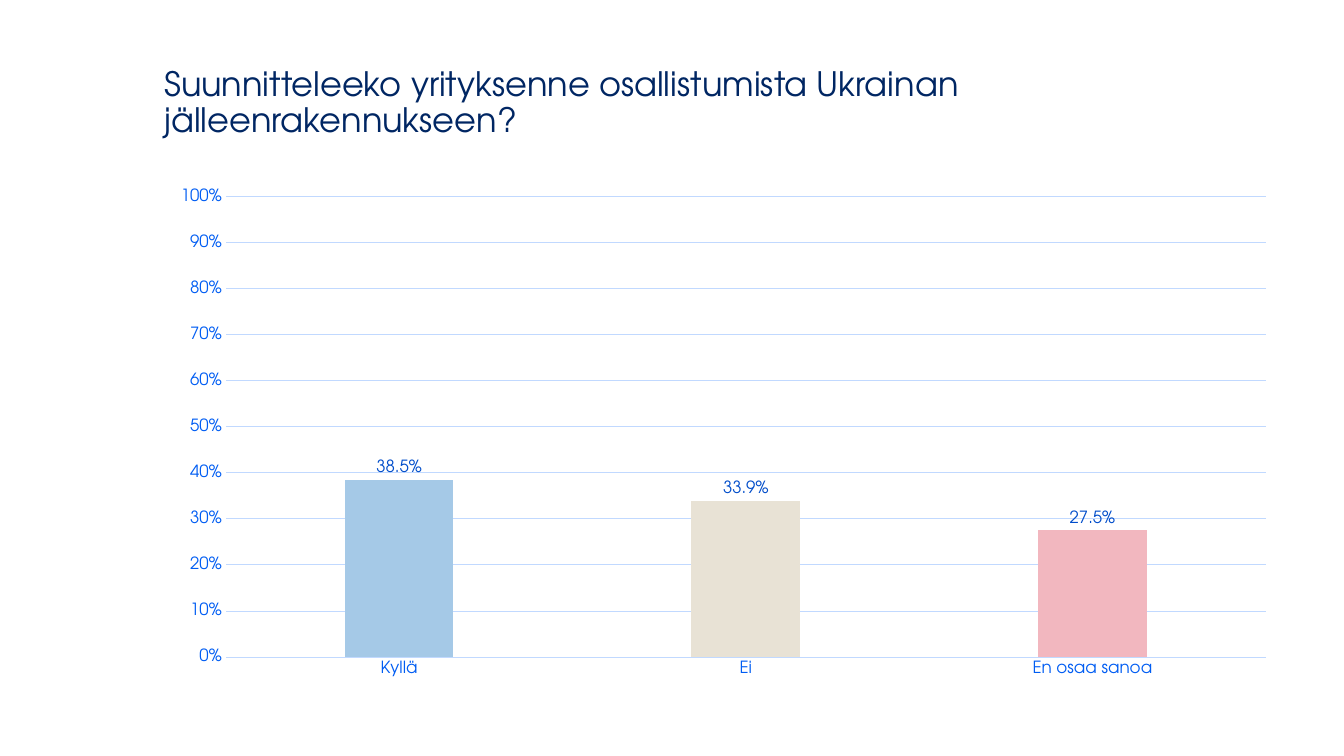
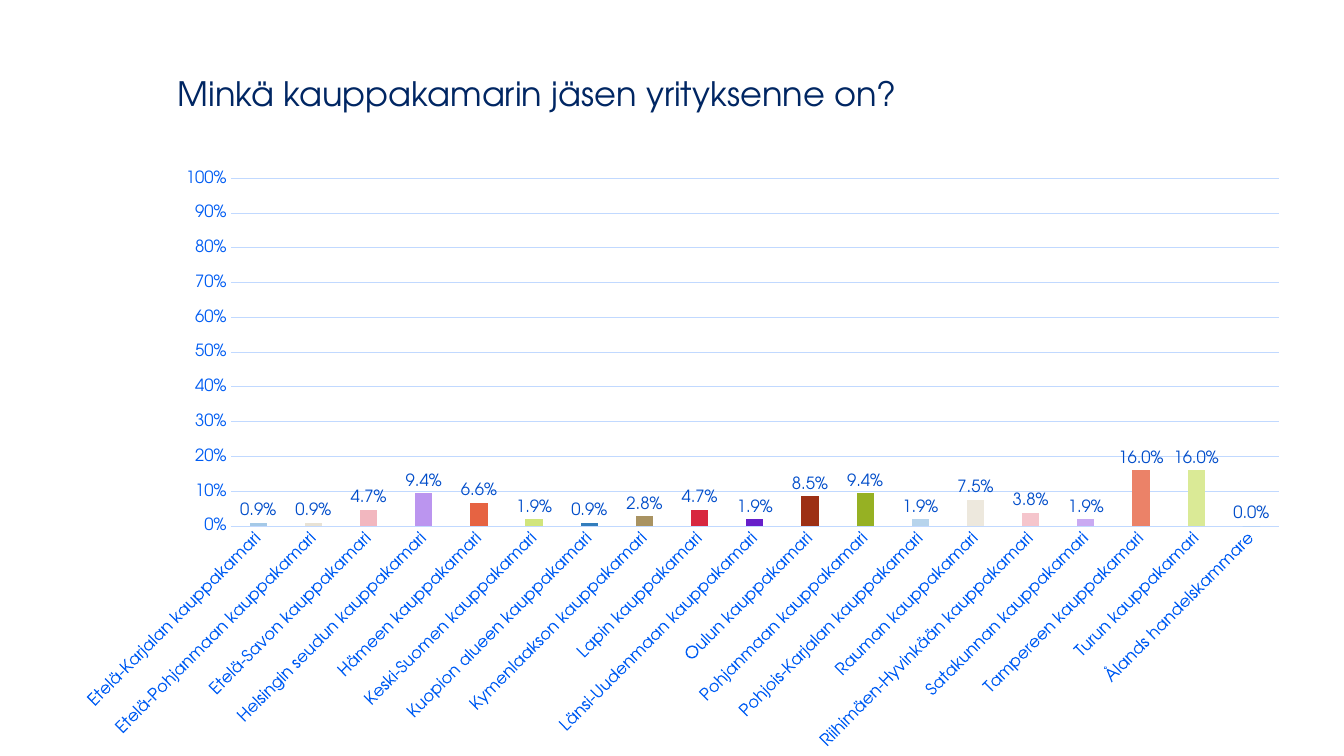
from dataclasses import dataclass

import pptx
import pptx.chart.data
import pptx.dml.color
import pptx.enum.chart
import pptx.enum.text
import pptx.oxml
import pptx.oxml.ns
import pptx.util
from pptx.util import Inches

FONT = "TeX Gyre Adventor"
NAVY, AXIS_BLUE, LABEL_BLUE, GRID_BLUE = "002663", "005DF3", "004DCA", "C1D9FF"

Box = tuple[float, float, float, float]  # left, top, width, height in inches


@dataclass
class Bar:
    name: str
    value: float
    color: str


@dataclass
class ChartSlide:
    title: str
    title_box: Box
    chart_box: Box
    plot_box: Box
    bars: list[Bar]


SLIDES = [
    ChartSlide(
        "Suunnitteleeko yrityksenne osallistumista Ukrainan jälleenrakennukseen?",
        (1.53, 0.3, 10.94, 1.45), (1.44, 1.75, 11.12, 5.14), (2.24, 1.95, 10.32, 4.57),
        [
            Bar("Kyllä", 0.385, "A5C9E7"),
            Bar("Ei", 0.339, "E8E2D5"),
            Bar("En osaa sanoa", 0.275, "F2B7BF"),
        ],
    ),
    ChartSlide(
        "Minkä kauppakamarin jäsen yrityksenne on?",
        (1.66, 0.22, 10.94, 1.45), (0.85, 1.67, 11.84, 5.87), (2.24, 1.77, 10.45, 3.45),
        [
            Bar("Etelä-Karjalan kauppakamari", 0.009, "A5C9E7"),
            Bar("Etelä-Pohjanmaan kauppakamari", 0.009, "E8E2D5"),
            Bar("Etelä-Savon kauppakamari", 0.047, "F2B7BF"),
            Bar("Helsingin seudun kauppakamari", 0.094, "BB95EF"),
            Bar("Hämeen kauppakamari", 0.066, "E66342"),
            Bar("Keski-Suomen kauppakamari", 0.019, "D1E57C"),
            Bar("Kuopion alueen kauppakamari", 0.009, "327DBC"),
            Bar("Kymenlaakson kauppakamari", 0.028, "A99362"),
            Bar("Lapin kauppakamari", 0.047, "D8273F"),
            Bar("Länsi-Uudenmaan kauppakamari", 0.019, "671FCA"),
            Bar("Oulun kauppakamari", 0.085, "9D3015"),
            Bar("Pohjanmaan kauppakamari", 0.094, "96B123"),
            Bar("Pohjois-Karjalan kauppakamari", 0.019, "B7D4EC"),
            Bar("Rauman kauppakamari", 0.075, "EDE8DD"),
            Bar("Riihimäen-Hyvinkään kauppakamari", 0.038, "F5C5CC"),
            Bar("Satakunnan kauppakamari", 0.019, "C9AAF2"),
            Bar("Tampereen kauppakamari", 0.16, "EB8268"),
            Bar("Turun kauppakamari", 0.16, "DAEA96"),
            Bar("Ålands handelskammare", 0, "66A3D6"),
        ],
    ),
]


def rgb(color: str) -> pptx.dml.color.RGBColor:
    return pptx.dml.color.RGBColor.from_string(color)


def set_all(target, values: dict) -> None:
    for name, value in values.items():
        setattr(target, name, value)


def style_font(font, size: float, color: str) -> None:
    set_all(font, {"name": FONT, "size": pptx.util.Pt(size), "bold": False})
    font.color.rgb = rgb(color)


def style_line(line) -> None:
    line.color.rgb = rgb(GRID_BLUE)
    line.width = pptx.util.Pt(0.75)


def add_title(s, text: str, box: Box) -> None:
    sp = s.shapes.title
    set_all(sp, dict(zip(("left", "top", "width", "height"), map(Inches, box))))
    tf = sp.text_frame
    set_all(tf, {
        "text": text,
        "word_wrap": True,
        "auto_size": pptx.enum.text.MSO_AUTO_SIZE.NONE,
        "vertical_anchor": pptx.enum.text.MSO_ANCHOR.MIDDLE,
    })
    p = tf.paragraphs[0]
    set_all(p, {"alignment": pptx.enum.text.PP_ALIGN.LEFT, "line_spacing": 0.9})
    style_font(p.runs[0].font, 24, NAVY)


def place_plot(chart, chart_box: Box, plot_box: Box) -> None:
    """Fix the inner plot area at plot_box, given in slide inches."""
    left, top, width, height = chart_box
    x, y, w, h = plot_box
    shares = {"x": (x - left) / width, "y": (y - top) / height, "w": w / width, "h": h / height}
    modes = "".join(f'<c:{n}Mode val="edge"/>' for n in "xy")
    sizes = "".join(f'<c:{n} val="{v:.4f}"/>' for n, v in shares.items())
    area = chart._chartSpace.chart.plotArea
    for old in area.findall(pptx.oxml.ns.qn("c:layout")):
        area.remove(old)
    area.insert(0, pptx.oxml.parse_xml(
        f'<c:layout {pptx.oxml.ns.nsdecls("c")}><c:manualLayout>'
        f'<c:layoutTarget val="inner"/>{modes}{sizes}</c:manualLayout></c:layout>'))


def style_axes(chart) -> None:
    for axis in (chart.category_axis, chart.value_axis):
        none = pptx.enum.chart.XL_TICK_MARK.NONE
        set_all(axis, {"major_tick_mark": none, "minor_tick_mark": none})
        style_font(axis.tick_labels.font, 12, AXIS_BLUE)
    style_line(chart.category_axis.format.line)
    # Automatic rotation: long category names are slanted
    body = chart.category_axis._element.find(".//" + pptx.oxml.ns.qn("a:bodyPr"))
    body.set("rot", "-60000000")

    axis = chart.value_axis
    set_all(axis, {"minimum_scale": 0, "maximum_scale": 1, "major_unit": 0.1,
                   "has_major_gridlines": True})
    set_all(axis.tick_labels, {"number_format": "0%", "number_format_is_linked": False})
    axis.format.line.fill.background()
    style_line(axis.major_gridlines.format.line)


def add_bar_chart(s, spec: ChartSlide) -> None:
    data = pptx.chart.data.CategoryChartData(number_format="0.0%")
    data.categories = [bar.name for bar in spec.bars]
    data.add_series("Series 1", [bar.value for bar in spec.bars])
    kind = pptx.enum.chart.XL_CHART_TYPE.COLUMN_CLUSTERED
    chart = s.shapes.add_chart(kind, *map(Inches, spec.chart_box), data).chart
    set_all(chart, {"has_title": False, "has_legend": False})
    style_font(chart.font, 10, NAVY)
    style_axes(chart)
    place_plot(chart, spec.chart_box, spec.plot_box)

    # Bars and their value labels
    plot = chart.plots[0]
    set_all(plot, {"gap_width": 219, "overlap": -27, "vary_by_categories": False,
                   "has_data_labels": True})
    set_all(plot.data_labels, {
        "show_value": True,
        "number_format": "0.0%",
        "number_format_is_linked": False,
        "position": pptx.enum.chart.XL_LABEL_POSITION.OUTSIDE_END,
    })
    style_font(plot.data_labels.font, 12, LABEL_BLUE)
    for i, bar in enumerate(spec.bars):
        fill = plot.series[0].points[i].format.fill
        fill.solid()
        fill.fore_color.rgb = rgb(bar.color)


def main() -> None:
    prs = pptx.Presentation()
    set_all(prs, {"slide_width": Inches(13.33), "slide_height": Inches(7.5)})
    for spec in SLIDES:
        s = prs.slides.add_slide(prs.slide_layouts.get_by_name("Title Only"))
        add_title(s, spec.title, spec.title_box)
        add_bar_chart(s, spec)
    prs.save("out.pptx")


if __name__ == "__main__":
    main()
